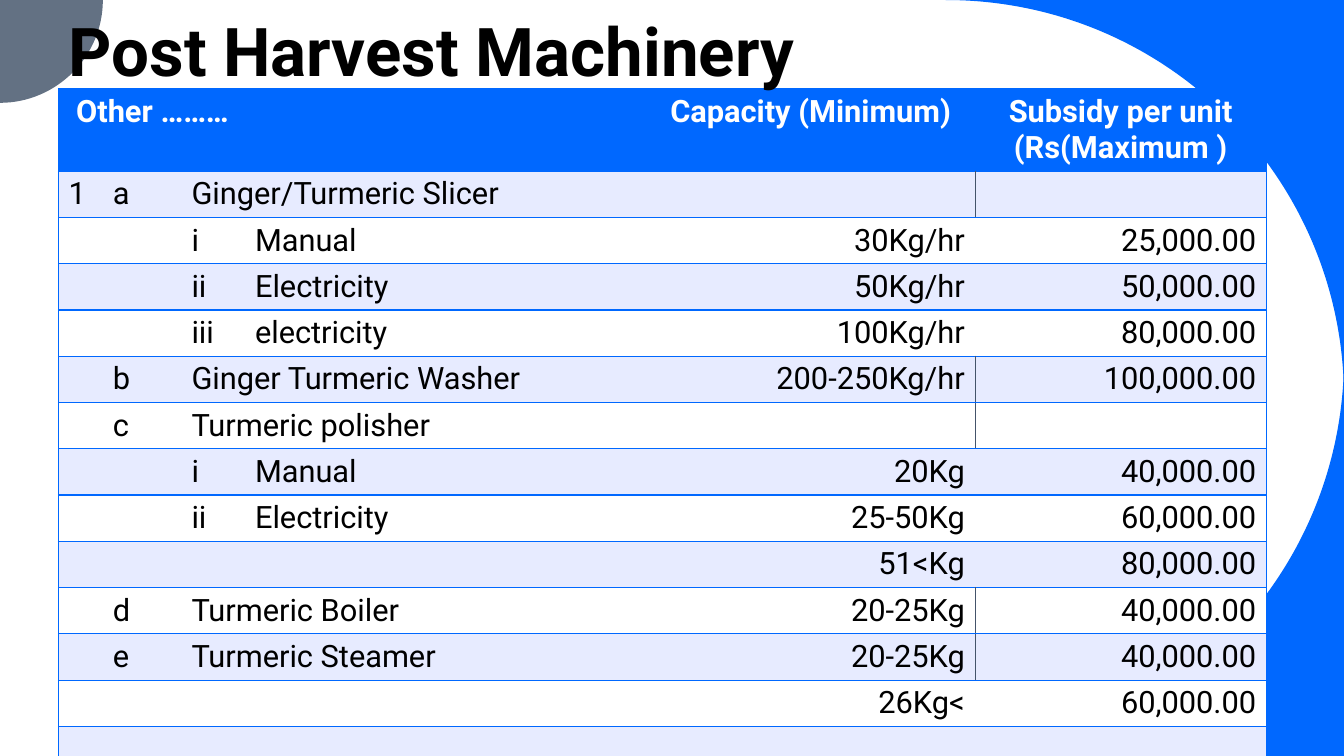
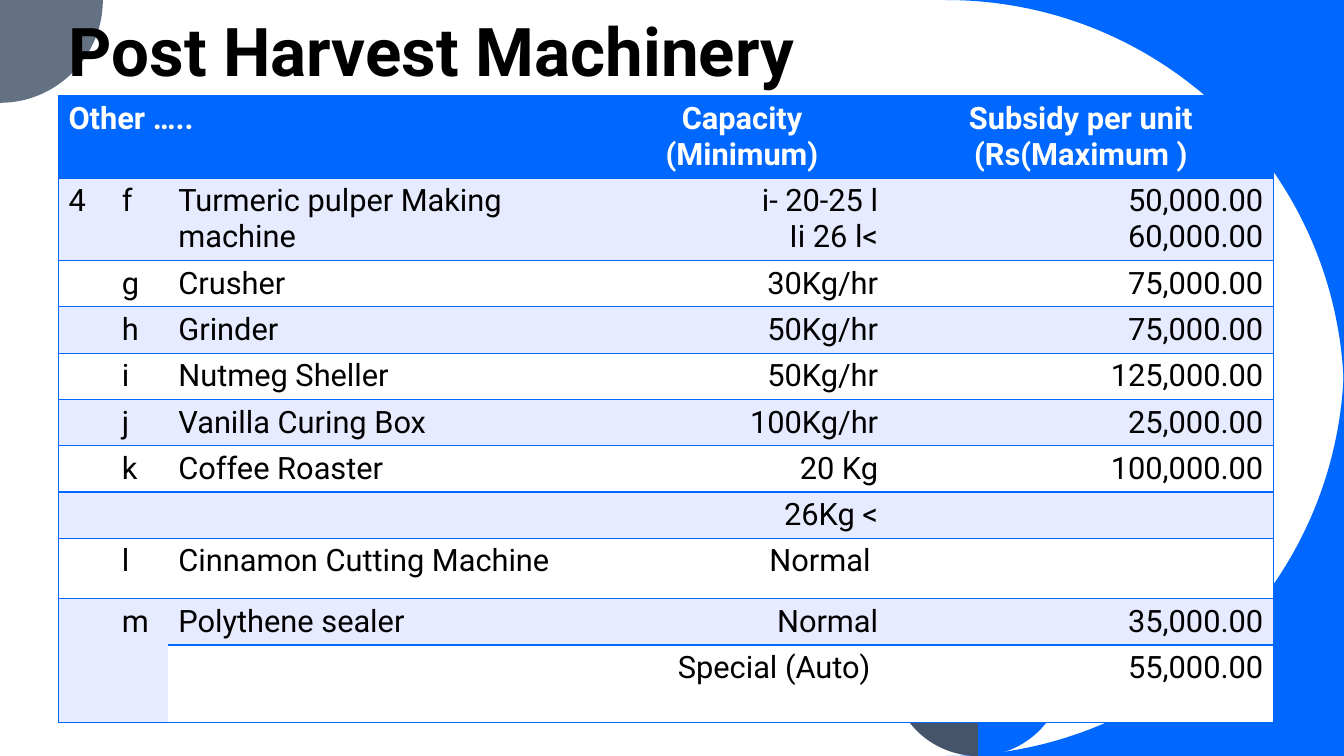
from dataclasses import dataclass

from lxml.etree import SubElement
from pptx import Presentation
from pptx.dml.color import RGBColor
from pptx.enum.text import MSO_ANCHOR, MSO_AUTO_SIZE, PP_ALIGN
from pptx.oxml.ns import qn
from pptx.util import Inches, Pt


@dataclass(frozen=True)
class Theme:
    font: str = "Roboto"
    title_size: int = 48
    table_size: int = 22
    blue: str = "0068FF"
    pale_blue: str = "E7EBFF"
    grey: str = "637183"
    slate: str = "44546A"
    white: str = "FFFFFF"
    black: str = "000000"
    plain_table_style: str = "{2D5ABB26-0587-4C30-8999-92F81FD0307C}"


theme = Theme()
WIDTH, HEIGHT = 13.33, 7.5
LEFT = 0.58


def add_outline(shapes, start, segments, colour):
    """Closed outline; a segment is one point (line) or three (cubic curve)."""
    corners = [(Inches(x), Inches(y)) for segment in segments for x, y in segment]
    builder = shapes.build_freeform(Inches(start[0]), Inches(start[1]))
    builder.add_line_segments(corners)
    shape = builder.convert_to_shape()
    lines = list(shape.element.iter(qn("a:lnTo")))
    for segment in segments:
        line, *controls = lines[:len(segment)]
        del lines[:len(segment)]
        if controls:
            line.addprevious(curve := line.makeelement(qn("a:cubicBezTo")))
            for part in (line, *controls):
                curve.append(part[0])
                part.getparent().remove(part)
    shape.shadow.inherit = False
    shape.fill.solid()
    shape.fill.fore_color.rgb = RGBColor.from_string(colour)
    shape.line.fill.background()
    return shape


def add_border(cell, side, colour, points):
    """Add one cell edge; call in the order L, R, T, B and before the fill."""
    properties = cell._tc.get_or_add_tcPr()
    line = SubElement(properties, qn(f"a:ln{side}"), w=str(Pt(points)))
    fill = SubElement(line, qn("a:solidFill"))
    SubElement(fill, qn("a:srgbClr"), val=colour)


tables = [
    {
        "top": 0.88,
        "columns": [0.44, 0.78, 0.63, 3.98, 3.26, 2.89],
        "heights": [0.76] + [0.4] * 12 + [0.51],
        "merges": [(0, 0, 0, 3), (13, 0, 13, 5)] + [(row, 2, row, 3) for row in (1, 5, 6, 10, 11)],
        "divided_rows": (1, 5, 6, 10, 11),
        "rows": [
            (" Other ………", "", "", "", "Capacity (Minimum)", "Subsidy per unit (Rs(Maximum )"),
            ("1", "a", "Ginger/Turmeric Slicer", "", "", ""),
            ("", "", "i", "Manual", "30Kg/hr", "25,000.00"),
            ("", "", "ii", "Electricity", "50Kg/hr", "50,000.00"),
            ("", "", "iii", "electricity", "100Kg/hr", "80,000.00"),
            ("", "b", "Ginger Turmeric Washer", "", "200-250Kg/hr", "100,000.00"),
            ("", "c", "Turmeric polisher", "", "", ""),
            ("", "", "i", "Manual", "20Kg", "40,000.00"),
            ("", "", "ii", "Electricity", "25-50Kg", "60,000.00"),
            ("", "", "", "", "51<Kg", "80,000.00"),
            ("", "d", "Turmeric Boiler", "", "20-25Kg", "40,000.00"),
            ("", "e", "Turmeric Steamer", "", "20-25Kg", "40,000.00"),
            ("", "", "", "", "26Kg<", "60,000.00"),
            ("", "", "", "", "", ""),
        ],
    },
    {
        "top": 0.95,
        "columns": [0.53, 0.56, 4.24, 2.9, 3.82],
        "heights": [0.77] * 2 + [0.44] * 6 + [0.6, 0.44, 0.77],
        "merges": [(0, 0, 0, 2), (9, 0, 10, 0), (9, 1, 10, 1)],
        "divided_rows": (),
        "rows": [
            ("Other …..", "", "", "Capacity (Minimum)", "Subsidy per unit (Rs(Maximum )"),
            ("4", "f", "Turmeric pulper Making machine", "i- 20-25 l\nIi 26 l<", "50,000.00\n60,000.00"),
            ("", "g", "Crusher", "30Kg/hr", "75,000.00"),
            ("", "h", "Grinder", "50Kg/hr", "75,000.00"),
            ("", "i", "Nutmeg Sheller", "50Kg/hr", "125,000.00"),
            ("", "j", "Vanilla Curing Box", "100Kg/hr", "25,000.00"),
            ("", "k", "Coffee Roaster", "20 Kg", "100,000.00"),
            ("", "", "", "26Kg <", ""),
            ("", "l", "Cinnamon Cutting Machine", "Normal ", ""),
            ("", "m", "Polythene sealer", "Normal", "35,000.00"),
            ("", "", "", "Special (Auto) ", "55,000.00"),
        ],
    },
]

presentation = Presentation()
presentation.slide_width = Inches(WIDTH)
presentation.slide_height = Inches(HEIGHT)
layout = presentation.slide_layouts[5]
slides = [presentation.slides.add_slide(layout) for _ in tables]

# Corner artwork is drawn once and moved to the layout
petal_start = (10.56, 6.11)
petal = [
    [(10.56, 6.64)],
    [(10.56, 7.12), (10.17, 7.5), (9.7, 7.5)],
    [(9.7, 6.97)],
    [(9.7, 6.53), (10.04, 6.16), (10.47, 6.12)],
]
petal_axis = 9.7
mirrored_start = (2 * petal_axis - petal_start[0], petal_start[1])
mirrored_petal = [[(2 * petal_axis - x, y) for x, y in segment] for segment in petal]
artwork = [
    ((WIDTH, 0), [[(9.38, 0)], [(11.57, 0), (WIDTH, 1.77), (WIDTH, 3.95)]], theme.blue),
    ((WIDTH, 3.55), [[(WIDTH, 5.73), (11.57, HEIGHT), (9.38, HEIGHT)], [(WIDTH, HEIGHT)]], theme.blue),
    ((0, 0), [[(1.02, 0)], [(1.02, 0.56), (0.56, 1.02), (0, 1.02)]], theme.grey),
    (petal_start, petal, theme.blue),
    (mirrored_start, mirrored_petal, theme.slate),
]
for position, (start, segments, colour) in enumerate(artwork):
    outline = add_outline(slides[0].shapes, start, segments, colour)
    layout.shapes.element.insert(2 + position, outline.element)

for slide, content in zip(slides, tables):
    columns, heights, rows = content["columns"], content["heights"], content["rows"]
    frame = slide.shapes.add_table(
        len(rows), len(columns), Inches(LEFT), Inches(content["top"]),
        Inches(sum(columns)), Inches(sum(heights)),
    )
    table = frame.table
    table.first_row = table.horz_banding = False
    table._tbl.tblPr.find(qn("a:tableStyleId")).text = theme.plain_table_style
    for column, width in zip(table.columns, columns):
        column.width = Inches(width)
    for row, height in zip(table.rows, heights):
        row.height = Inches(height)
    for top, left, bottom, right in content["merges"]:
        table.cell(top, left).merge(table.cell(bottom, right))

    last_column = len(columns) - 1
    for row_index, texts in enumerate(rows):
        is_header = row_index == 0
        fill_colour = theme.blue if is_header else theme.pale_blue if row_index % 2 else theme.white
        for column_index, text in enumerate(texts):
            cell = table.cell(row_index, column_index)
            if cell.is_spanned:
                continue
            if column_index == 0:
                add_border(cell, "L", theme.blue, 1)
            elif column_index == last_column and row_index in content["divided_rows"]:
                add_border(cell, "L", theme.slate, 0.5)
            if column_index + cell.span_width > last_column:
                add_border(cell, "R", theme.blue, 1)
            add_border(cell, "T", theme.blue, 1)
            add_border(cell, "B", theme.blue, 1)
            cell.fill.solid()
            cell.fill.fore_color.rgb = RGBColor.from_string(fill_colour)
            if not text:
                continue
            cell.text = text
            for paragraph in cell.text_frame.paragraphs:
                if column_index >= last_column - 1:
                    paragraph.alignment = PP_ALIGN.CENTER if is_header else PP_ALIGN.RIGHT
                paragraph.font.name = theme.font
                paragraph.font.size = Pt(theme.table_size)
                paragraph.font.bold = is_header
                paragraph.font.color.rgb = RGBColor.from_string(theme.white if is_header else theme.black)

    title = slide.shapes.title
    title.left, title.top = Inches(LEFT), Inches(0.13)
    title.width, title.height = Inches(10.66), Inches(0.82)
    title.text_frame.text = "Post Harvest Machinery"
    title.text_frame.auto_size = MSO_AUTO_SIZE.NONE
    title.text_frame.vertical_anchor = MSO_ANCHOR.BOTTOM
    paragraph = title.text_frame.paragraphs[0]
    paragraph.alignment = PP_ALIGN.LEFT
    paragraph.line_spacing = 0.9
    paragraph.font.name = theme.font
    paragraph.font.size = Pt(theme.title_size)
    paragraph.font.bold = True
    paragraph.font.color.rgb = RGBColor.from_string(theme.black)
    slide.shapes.element.append(title.element)

presentation.save("out.pptx")
